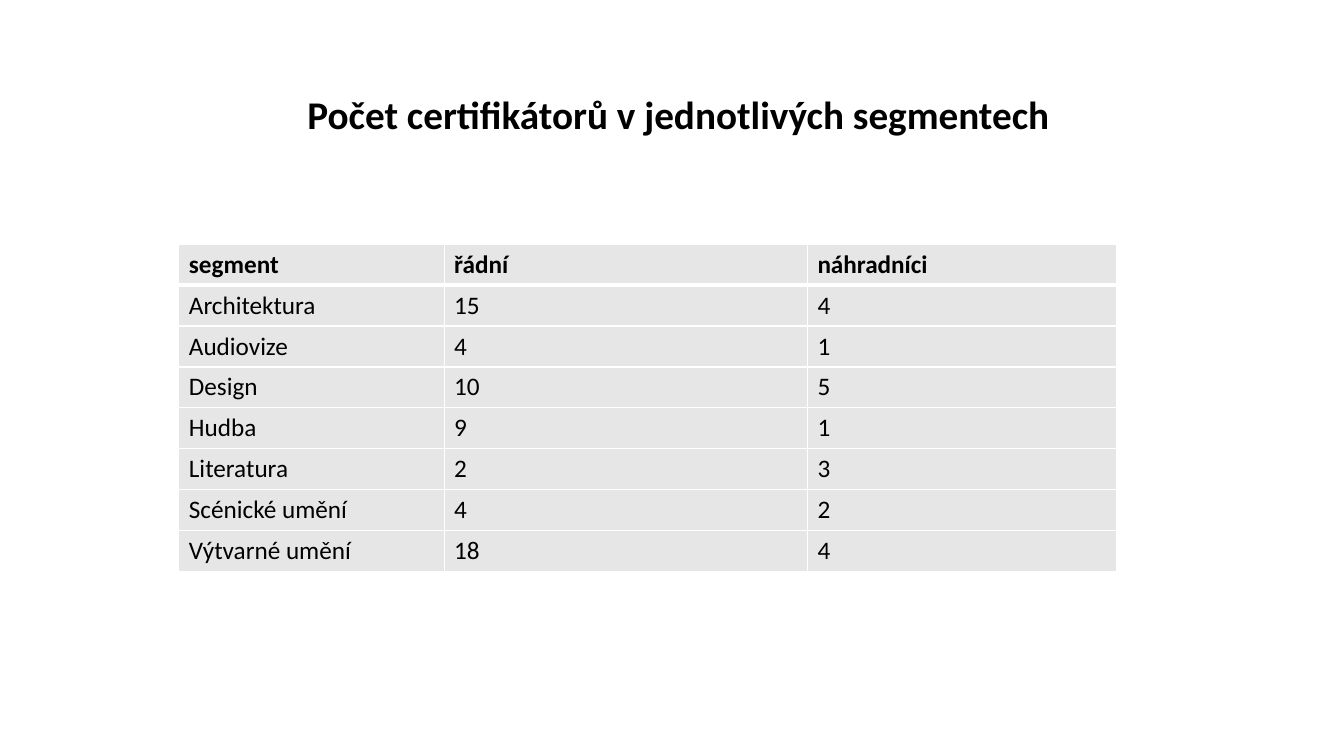
"""Build a slide with a table of certifier counts by segment."""
from dataclasses import dataclass

from lxml import etree
from pptx import Presentation
from pptx import util as u
from pptx.dml.color import RGBColor
from pptx.enum import text
from pptx.oxml import ns

FONT = "Calibri"
BLACK, WHITE, GREY = "000000", "FFFFFF", "E7E6E6"
COLUMN_WIDTHS = (189.5, 259.5, 221)
ROW_HEIGHT = 29.2


@dataclass(frozen=True)
class Segment:
    name: str
    regular: int
    substitutes: int


HEADINGS = ("segment", "řádní", "náhradníci")
SEGMENTS = (
    Segment("Architektura", 15, 4),
    Segment("Audiovize", 4, 1),
    Segment("Design", 10, 5),
    Segment("Hudba", 9, 1),
    Segment("Literatura", 2, 3),
    Segment("Scénické umění", 4, 2),
    Segment("Výtvarné umění", 18, 4),
)


def color(value: str) -> RGBColor:
    return RGBColor.from_string(value)


def add_run(paragraph, content: str, size: float, bold: bool) -> None:
    run = paragraph.add_run()
    run.text = content
    run.font.name = FONT
    run.font.size = u.Pt(size)
    run.font.bold = bold
    run.font.color.rgb = color(BLACK)


def add_border(cell, side: str, width: float) -> None:
    properties = cell._tc.get_or_add_tcPr()
    line = etree.SubElement(properties, ns.qn(f"a:ln{side}"), w=str(u.Pt(width)))
    fill = etree.SubElement(line, ns.qn("a:solidFill"))
    etree.SubElement(fill, ns.qn("a:srgbClr"), val=WHITE)


def draw_cell(cell, content: str, row: int) -> None:
    widths = {"L": 1, "R": 1, "T": 3 if row == 1 else 1, "B": 3 if row == 0 else 1}
    for side, width in widths.items():
        add_border(cell, side, width)
    cell.fill.solid()
    cell.fill.fore_color.rgb = color(GREY)
    add_run(cell.text_frame.paragraphs[0], content, 18, row == 0)


def draw_title(slide, content: str) -> None:
    title = slide.shapes.title
    title.left, title.top = u.Pt(70.5), u.Pt(31.5)
    title.width, title.height = u.Pt(828), u.Pt(104.5)
    frame = title.text_frame
    frame.word_wrap = True
    frame.vertical_anchor = text.MSO_ANCHOR.MIDDLE
    paragraph = frame.paragraphs[0]
    paragraph.alignment = text.PP_ALIGN.CENTER
    paragraph.line_spacing = 0.9
    add_run(paragraph, content, 28, True)


def draw_table(slide, segments: tuple[Segment, ...]) -> None:
    rows = [HEADINGS]
    rows += [(s.name, str(s.regular), str(s.substitutes)) for s in segments]
    table = slide.shapes.add_table(
        len(rows), len(HEADINGS), u.Pt(127.75), u.Pt(174.5),
        u.Pt(sum(COLUMN_WIDTHS)), u.Pt(ROW_HEIGHT * len(rows)),
    ).table
    for column, width in zip(table.columns, COLUMN_WIDTHS):
        column.width = u.Pt(width)
    for row_index, values in enumerate(rows):
        table.rows[row_index].height = u.Pt(ROW_HEIGHT)
        for column_index, value in enumerate(values):
            draw_cell(table.cell(row_index, column_index), value, row_index)


def main() -> None:
    presentation = Presentation()
    presentation.slide_width, presentation.slide_height = u.Pt(960), u.Pt(540)
    slide = presentation.slides.add_slide(presentation.slide_layouts[5])
    draw_title(slide, "Počet certifikátorů v jednotlivých segmentech")
    draw_table(slide, SEGMENTS)
    presentation.save("out.pptx")


if __name__ == "__main__":
    main()
